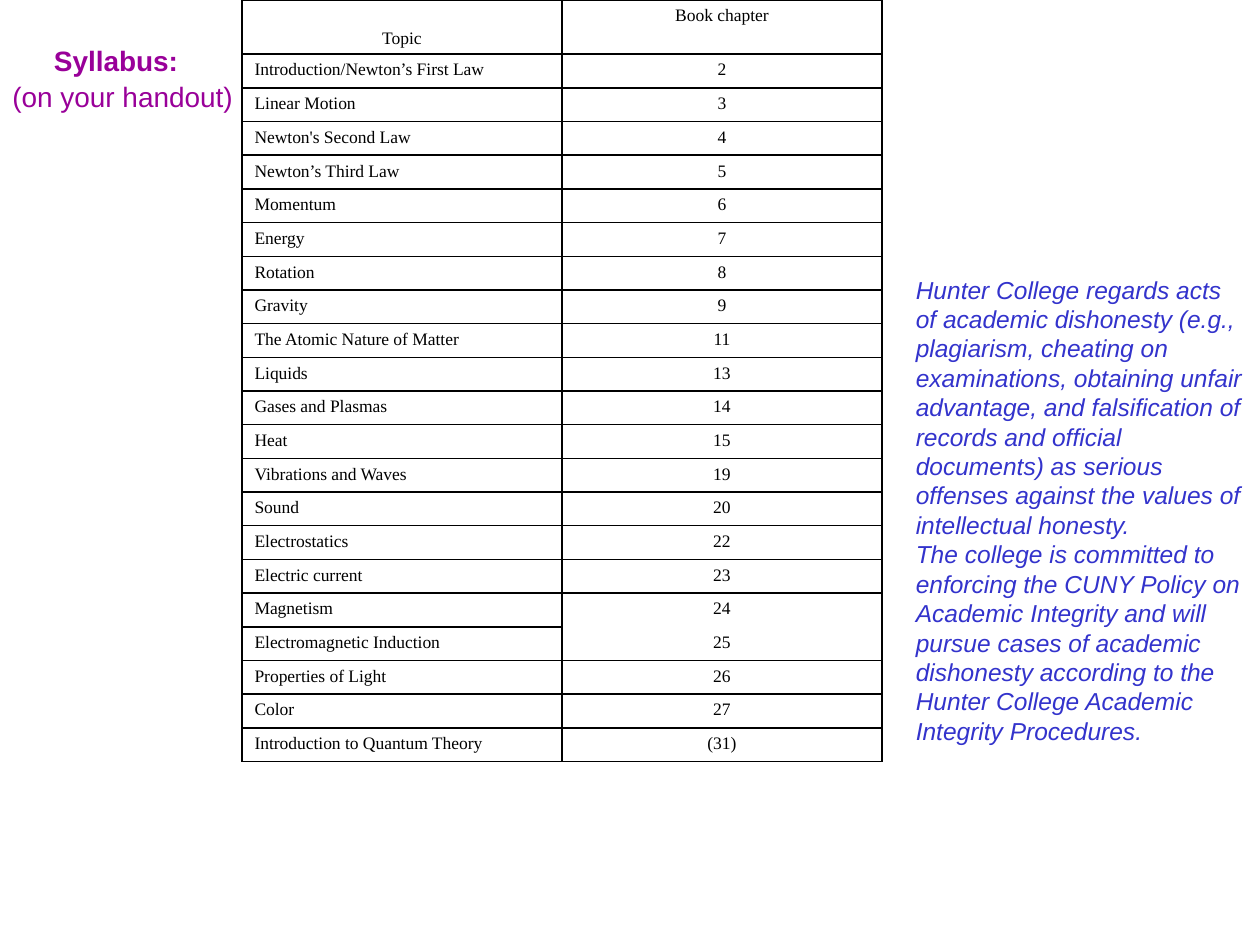
from typing import NamedTuple

from lxml import etree
from pptx import Presentation
from pptx.dml.color import RGBColor
from pptx.enum.text import MSO_ANCHOR, PP_ALIGN
from pptx.oxml.ns import qn
from pptx.util import Inches, Pt

LEFT, CENTER = PP_ALIGN.LEFT, PP_ALIGN.CENTER
TOP, MIDDLE, BOTTOM = MSO_ANCHOR.TOP, MSO_ANCHOR.MIDDLE, MSO_ANCHOR.BOTTOM

BLACK = RGBColor(0x00, 0x00, 0x00)
PURPLE = RGBColor(0x99, 0x00, 0x99)
BLUE = RGBColor(0x33, 0x33, 0xCC)

TABLE_HEIGHT, HEADER_HEIGHT, COLUMN_WIDTH = 6.05, 0.43, 2.54
BORDER_WIDTH = Pt(1)


class Lesson(NamedTuple):
    topic: str
    chapter: str


class Note(NamedTuple):
    left: float
    top: float
    width: float
    height: float
    paragraphs: list[str]
    size: int
    color: RGBColor
    bold: bool = False
    italic: bool = False
    wrap: bool = True
    anchor: MSO_ANCHOR = TOP


LESSONS = [
    Lesson("Introduction/Newton’s First Law", "2"),
    Lesson("Linear Motion", "3"),
    Lesson("Newton's Second Law", "4"),
    Lesson("Newton’s Third Law", "5"),
    Lesson("Momentum", "6"),
    Lesson("Energy", "7"),
    Lesson("Rotation", "8"),
    Lesson("Gravity", "9"),
    Lesson("The Atomic Nature of Matter", "11"),
    Lesson("Liquids", "13"),
    Lesson("Gases and Plasmas", "14"),
    Lesson("Heat", "15"),
    Lesson("Vibrations and Waves", "19"),
    Lesson("Sound", "20"),
    Lesson("Electrostatics", "22"),
    Lesson("Electric current", "23"),
    Lesson("Magnetism", "24"),
    Lesson("Electromagnetic Induction", "25"),
    Lesson("Properties of Light", "26"),
    Lesson("Color", "27"),
    Lesson("Introduction to Quantum Theory", "(31)"),
]

HEADING = Note(0.33, 0.29, 1.25, 0.37, ["Syllabus:"], 16, PURPLE,
               bold=True, wrap=False, anchor=MIDDLE)
HANDOUT = Note(0, 0.58, 2.25, 0.37, ["(on your handout)"], 16, PURPLE)
INTEGRITY = Note(7.17, 2.13, 2.83, 4.06, [
    "Hunter College regards acts of academic dishonesty (e.g., plagiarism, "
    "cheating on examinations, obtaining unfair advantage, and falsification "
    "of records and official documents) as serious offenses against the "
    "values of intellectual honesty.",
    "The college is committed to enforcing the CUNY Policy on Academic "
    "Integrity and will pursue cases of academic dishonesty according to the "
    "Hunter College Academic Integrity Procedures.",
], 14, BLUE, italic=True)


def add_note(slide, note: Note) -> None:
    box = slide.shapes.add_textbox(Inches(note.left), Inches(note.top),
                                   Inches(note.width), Inches(note.height))
    frame = box.text_frame
    frame.word_wrap = note.wrap
    frame.vertical_anchor = note.anchor
    frame.text = "\n".join(note.paragraphs)
    for paragraph in frame.paragraphs:
        font = paragraph.font
        font.name, font.size = "Arial", Pt(note.size)
        font.bold, font.italic = note.bold, note.italic
        font.color.rgb = note.color


def set_borders(cell, sides: str) -> None:
    """Draw the named sides (L, R, T, B) and leave the others open."""
    properties = cell._tc.get_or_add_tcPr()
    for position, side in enumerate("LRTB"):
        line = etree.Element(qn(f"a:ln{side}"), w=str(BORDER_WIDTH))
        if side in sides:
            fill = etree.SubElement(line, qn("a:solidFill"))
            etree.SubElement(fill, qn("a:srgbClr"), val=str(BLACK))
        else:
            etree.SubElement(line, qn("a:noFill"))
        properties.insert(position, line)


def fill_cell(cell, text: str, align: PP_ALIGN, anchor: MSO_ANCHOR, sides: str) -> None:
    cell.text = text
    cell.vertical_anchor = anchor
    cell.fill.background()
    paragraph = cell.text_frame.paragraphs[0]
    paragraph.alignment = align
    paragraph.font.name, paragraph.font.size = "Times New Roman", Pt(10)
    paragraph.font.color.rgb = BLACK
    set_borders(cell, sides)


def add_syllabus(slide) -> None:
    syllabus = slide.shapes.add_table(
        len(LESSONS) + 1, 2, Inches(1.92), Inches(0),
        Inches(2 * COLUMN_WIDTH), Inches(TABLE_HEIGHT)).table
    syllabus.first_row = syllabus.horz_banding = False
    for column in syllabus.columns:
        column.width = Inches(COLUMN_WIDTH)

    # Header
    syllabus.rows[0].height = Inches(HEADER_HEIGHT)
    fill_cell(syllabus.cell(0, 0), "Topic", CENTER, BOTTOM, "LRTB")
    fill_cell(syllabus.cell(0, 1), "Book chapter", CENTER, TOP, "LRTB")

    # Lessons; no rule between chapters 24 and 25
    open_sides = {"24": "LRT", "25": "LRB"}
    lesson_height = Inches((TABLE_HEIGHT - HEADER_HEIGHT) / len(LESSONS))
    for row, lesson in enumerate(LESSONS, start=1):
        syllabus.rows[row].height = lesson_height
        fill_cell(syllabus.cell(row, 0), lesson.topic, LEFT, TOP, "LRTB")
        fill_cell(syllabus.cell(row, 1), lesson.chapter, CENTER, TOP,
                  open_sides.get(lesson.chapter, "LRTB"))


def main() -> None:
    presentation = Presentation()
    presentation.slide_width, presentation.slide_height = Inches(10), Inches(7.5)
    slide = presentation.slides.add_slide(presentation.slide_layouts[6])
    add_note(slide, HEADING)
    add_syllabus(slide)
    add_note(slide, HANDOUT)
    add_note(slide, INTEGRITY)
    presentation.save("out.pptx")


if __name__ == "__main__":
    main()
